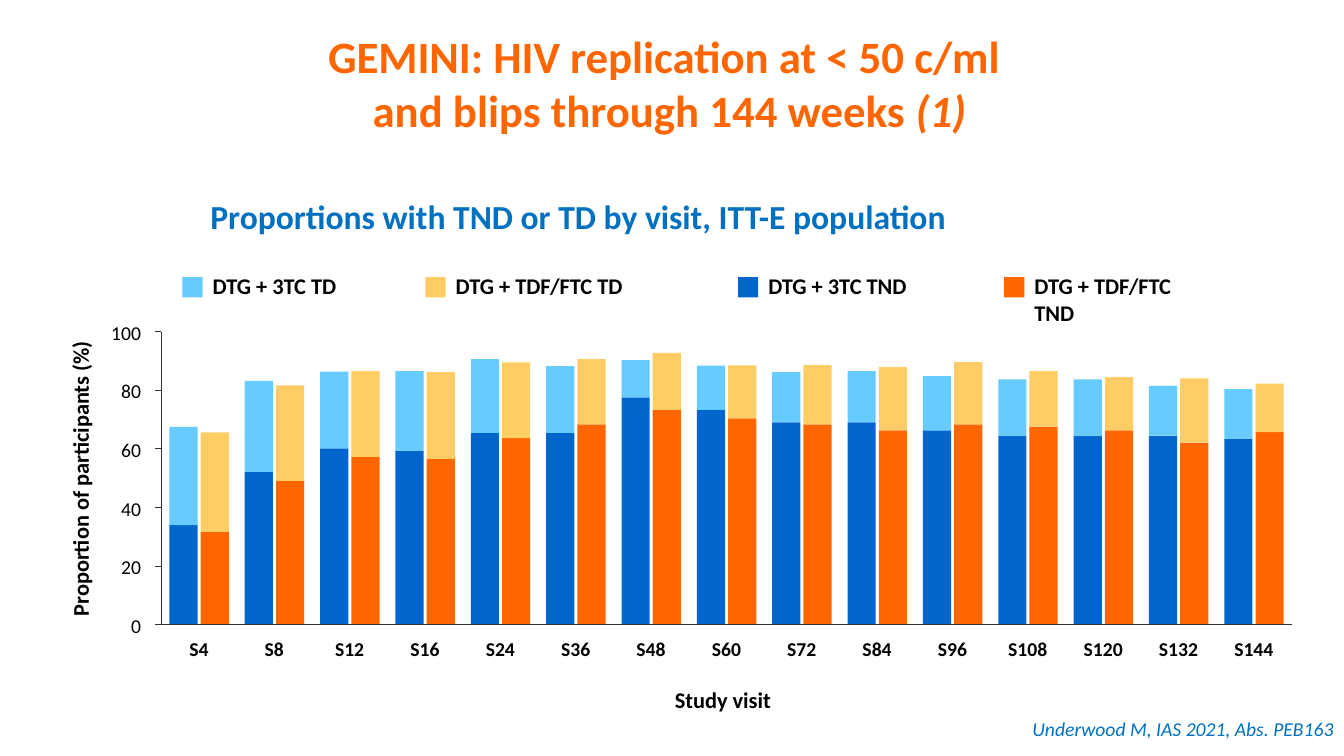
from lxml.etree import SubElement
from pptx import Presentation
from pptx.dml.color import RGBColor
from pptx.enum.shapes import MSO_CONNECTOR, MSO_SHAPE
from pptx.enum.text import MSO_ANCHOR, MSO_AUTO_SIZE, PP_ALIGN
from pptx.oxml.ns import qn
from pptx.util import Inches, Pt

COLORS = {
    "title": "FF6600", "accent": "0070C0", "text": "000000", "axis": "333333",
    "3TC TD": "66CCFF", "TDF/FTC TD": "FFCC66",
    "3TC TND": "0066CC", "TDF/FTC TND": "FF6600",
}
FONT = "Calibri"

# Percent of participants per visit: 3TC TND, 3TC TD, TDF/FTC TND, TDF/FTC TD
VISITS = {
    "S4": (34, 33.5, 31.7, 34), "S8": (52.2, 31, 49.1, 32.6),
    "S12": (60.2, 26.2, 57.3, 29.2), "S16": (59.4, 27.1, 56.6, 29.6),
    "S24": (65.5, 25.1, 63.7, 25.8), "S36": (65.5, 22.7, 68.4, 22.2),
    "S48": (77.6, 12.7, 73.3, 19.4), "S60": (73.3, 15.1, 70.4, 18.1),
    "S72": (69.1, 17.1, 68.4, 20.2), "S84": (69.1, 17.4, 66.3, 21.6),
    "S96": (66.3, 18.5, 68.4, 21.2), "S108": (64.4, 19.3, 67.6, 18.9),
    "S120": (64.4, 19.3, 66.3, 18.2), "S132": (64.5, 17, 62.2, 21.9),
    "S144": (63.5, 16.9, 65.7, 16.6),
}
LEGEND = {"3TC TD": 1.81, "TDF/FTC TD": 4.22, "3TC TND": 7.32, "TDF/FTC TND": 9.96}


def add_run(p, text, size, color, bold=False, italic=False):
    r = p.add_run()
    r.text = text
    r.font.name, r.font.size = FONT, Pt(size)
    r.font.bold, r.font.italic = bold, italic
    r.font.color.rgb = RGBColor.from_string(COLORS[color])


def add_text(s, box, text, size, color="text", align=PP_ALIGN.CENTER,
             bold=False, italic=False, tight=True):
    tb = s.shapes.add_textbox(*map(Inches, box))
    tf = tb.text_frame
    tf.word_wrap = not tight
    tf.auto_size = MSO_AUTO_SIZE.SHAPE_TO_FIT_TEXT
    if tight:
        tf.margin_left = tf.margin_right = tf.margin_top = tf.margin_bottom = 0
    p = tf.paragraphs[0]
    p.alignment = align
    add_run(p, text, size, color, bold, italic)
    return tb


def add_rect(s, box, color):
    sp = s.shapes.add_shape(MSO_SHAPE.RECTANGLE, *map(Inches, box))
    sp.shadow.inherit = False
    sp.fill.solid()
    sp.fill.fore_color.rgb = RGBColor.from_string(COLORS[color])
    sp.line.fill.background()


def add_axis_line(s, x1, y1, x2, y2):
    ln = s.shapes.add_connector(MSO_CONNECTOR.STRAIGHT, *map(Inches, (x1, y1, x2, y2)))
    ln.line.color.rgb = RGBColor.from_string(COLORS["axis"])
    ln.line.width = Pt(0.75)
    SubElement(ln._element.spPr, qn("a:effectLst"))


def add_title(s, box):
    title = s.shapes.title
    title.left, title.top, title.width, title.height = map(Inches, box)
    tf = title.text_frame
    tf.vertical_anchor = MSO_ANCHOR.MIDDLE
    p = tf.paragraphs[0]
    p.alignment = PP_ALIGN.CENTER
    add_run(p, "GEMINI: HIV replication at < 50 c/ml ", 32, "title", bold=True)
    p.add_line_break()
    add_run(p, "and blips through 144 weeks ", 32, "title", bold=True)
    add_run(p, "(1)", 32, "title", bold=True, italic=True)


def add_legend(s, top):
    for name, x in LEGEND.items():
        add_rect(s, (x, top, 0.2, 0.2), name)
        add_text(s, (x + 0.3, top - 0.05, 1.8, 0.27), f"DTG + {name}", 16,
                 align=PP_ALIGN.LEFT, bold=True)


def add_bars(s, box):
    left, top, width, height = box
    base, pitch = top + height, width / len(VISITS)
    bar, step = 0.28, 0.31
    for i, (visit, values) in enumerate(VISITS.items()):
        x = left + i * pitch
        for j, arm in enumerate(("3TC", "TDF/FTC")):
            y = base
            for level, value in zip(("TND", "TD"), values[2 * j:2 * j + 2]):
                h = height * value / 100
                y -= h
                add_rect(s, (x + 0.08 + j * step, y, bar, h), f"{arm} {level}")
        add_text(s, (x, base + 0.12, pitch, 0.24), visit, 14, bold=True)


def add_axes(s, box):
    left, top, width, height = box
    base = top + height
    add_axis_line(s, left, base, left, top)
    add_axis_line(s, left, base, left + width, base)
    for tick in range(0, 101, 20):
        y = base - height * tick / 100
        add_axis_line(s, left, y, left - 0.06, y)
        add_text(s, (left - 0.5, y - 0.11, 0.3, 0.24), str(tick), 14,
                 align=PP_ALIGN.RIGHT)
    add_text(s, (left + width / 2 - 0.52, base + 0.61, 0.97, 0.27),
             "Study visit", 16, bold=True)
    label = add_text(s, (left - 2.19, top + height / 2 - 0.13, 2.77, 0.27),
                     "Proportion of participants (%)", 16, bold=True)
    label.rotation = 270


def main():
    prs = Presentation()
    prs.slide_width, prs.slide_height = Inches(13.33), Inches(7.5)
    s = prs.slides.add_slide(prs.slide_layouts[5])
    plot = (1.6, 3.29, 11.21, 2.91)

    # Heading and subheading
    add_title(s, (2.01, 0.01, 9.26, 1.62))
    add_text(s, (1.73, 1.89, 8.01, 0.5),
             "Proportions with TND or TD by visit, ITT-E population", 24,
             "accent", bold=True, tight=False)
    # Paired stacked bars
    add_legend(s, 2.75)
    add_bars(s, plot)
    add_axes(s, plot)
    # Citation
    add_text(s, (9.66, 7.06, 3.67, 0.34), "Underwood M, IAS 2021, Abs. PEB163",
             14, "accent", PP_ALIGN.RIGHT, italic=True, tight=False)
    prs.save("out.pptx")


if __name__ == "__main__":
    main()
